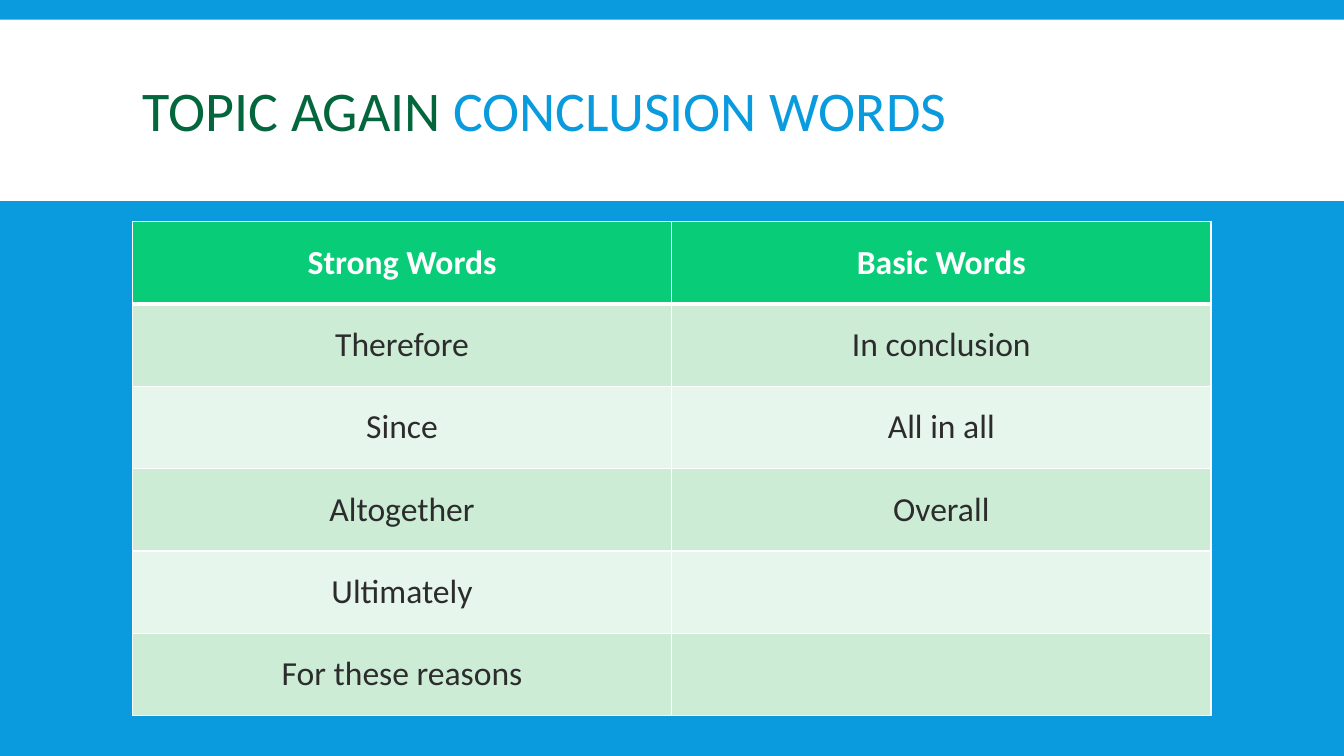
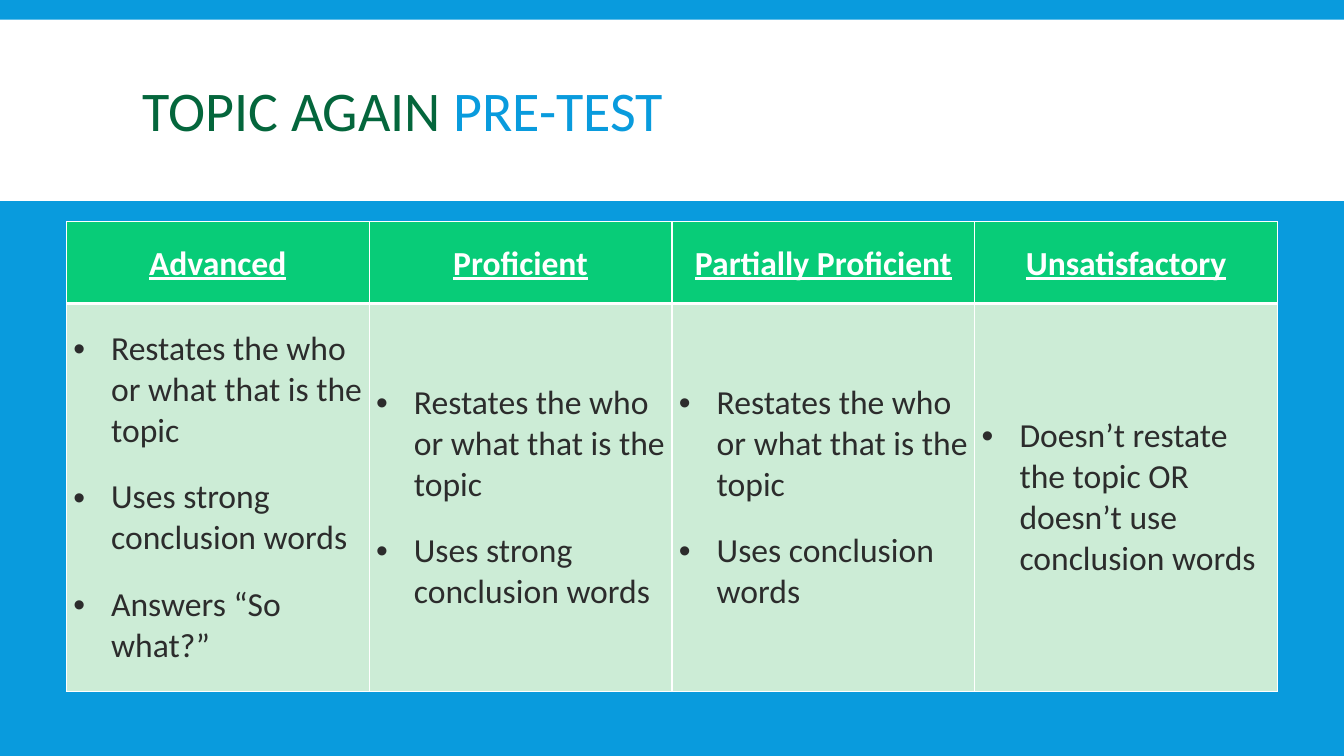
from dataclasses import dataclass

from lxml import etree
from pptx import Presentation
from pptx.dml.color import RGBColor
from pptx.enum.shapes import MSO_SHAPE
from pptx.enum.text import MSO_ANCHOR, PP_ALIGN
from pptx.oxml.ns import qn
from pptx.util import Pt

RECTANGLE = MSO_SHAPE.RECTANGLE
MIDDLE = MSO_ANCHOR.MIDDLE
CENTER = PP_ALIGN.CENTER
LEFT = PP_ALIGN.LEFT

PAGE_WIDTH, PAGE_HEIGHT = 960, 540
TABLE_TOP = 158.4
BULLET_INDENT = 27


@dataclass(frozen=True)
class Theme:
    font: str = "Calibri"
    title_size: int = 40
    table_size: int = 24
    blue: str = "099BDD"
    dark_green: str = "04663C"
    header_green: str = "08CC78"
    row_greens: tuple = ("CCECD6", "E7F6EC")
    white: str = "FFFFFF"
    ink: str = "2C2C2C"
    thin_line: int = 1
    header_line: int = 3


THEME = Theme()


def paint(fill, color):
    fill.solid()
    fill.fore_color.rgb = RGBColor.from_string(color)


def add_span(para, text, size, color, bold=False, underline=False):
    span = para.add_run()
    span.text = text
    font = span.font
    font.name, font.size = THEME.font, Pt(size)
    font.bold, font.underline = bold, underline
    font.color.rgb = RGBColor.from_string(color)


def add_bullet(para):
    """Give the paragraph a hanging round bullet."""
    properties = para._p.get_or_add_pPr()
    properties.set("marL", str(Pt(BULLET_INDENT)))
    properties.set("indent", str(-Pt(BULLET_INDENT)))
    etree.SubElement(properties, qn("a:buFont"), typeface="Arial")
    etree.SubElement(properties, qn("a:buChar"), char="•")


def set_borders(cell, top, bottom):
    """Draw white borders; must run before the cell is filled."""
    properties = cell._tc.get_or_add_tcPr()
    widths = {"L": THEME.thin_line, "R": THEME.thin_line, "T": top, "B": bottom}
    for side, width in widths.items():
        line = etree.SubElement(properties, qn(f"a:ln{side}"), w=str(Pt(width)))
        fill = etree.SubElement(line, qn("a:solidFill"))
        etree.SubElement(fill, qn("a:srgbClr"), val=THEME.white)


def add_page(deck, topic):
    """Add a blue page with its white title band."""
    page = deck.slides.add_slide(deck.slide_layouts[6])
    paint(page.background.fill, THEME.blue)

    band = page.shapes.add_shape(RECTANGLE, 0, Pt(14), Pt(PAGE_WIDTH), Pt(129.6))
    band.shadow.inherit = False
    paint(band.fill, THEME.white)
    band.line.fill.background()

    box = page.shapes.add_textbox(Pt(95), Pt(22), Pt(770), Pt(119))
    frame = box.text_frame
    frame.word_wrap = True
    frame.vertical_anchor = MIDDLE
    para = frame.paragraphs[0]
    para.line_spacing = 0.85
    add_span(para, "TOPIC AGAIN ", THEME.title_size, THEME.dark_green)
    add_span(para, topic, THEME.title_size, THEME.blue)
    return page


def style_cell(cell, row, margins):
    is_header = row == 0
    set_borders(
        cell,
        top=THEME.header_line if row == 1 else THEME.thin_line,
        bottom=THEME.header_line if is_header else THEME.thin_line,
    )
    paint(cell.fill, THEME.header_green if is_header else THEME.row_greens[(row - 1) % 2])
    cell.vertical_anchor = MIDDLE
    cell.margin_left = cell.margin_right = Pt(margins[0])
    cell.margin_top = cell.margin_bottom = Pt(margins[1])


def add_table(page, left, column_width, row_heights, margins, rows, write_cell):
    """Add a centred table; write_cell(cell, content, is_header) sets the text."""
    columns = len(rows[0])
    table = page.shapes.add_table(
        len(rows), columns, Pt(left), Pt(TABLE_TOP),
        Pt(columns * column_width), Pt(sum(row_heights)),
    ).table
    for column in table.columns:
        column.width = Pt(column_width)
    for row, (contents, height) in enumerate(zip(rows, row_heights)):
        table.rows[row].height = Pt(height)
        for column, content in enumerate(contents):
            cell = table.cell(row, column)
            style_cell(cell, row, margins)
            if content:
                write_cell(cell, content, row == 0)


def write_word(cell, word, is_header):
    para = cell.text_frame.paragraphs[0]
    para.alignment = CENTER
    color = THEME.white if is_header else THEME.ink
    add_span(para, word, THEME.table_size, color, bold=is_header)


def write_criteria(cell, content, is_header):
    """Write a level's name, or the list of its criteria as bullets."""
    frame = cell.text_frame
    if is_header:
        para = frame.paragraphs[0]
        para.alignment = CENTER
        para.line_spacing = 1.07
        add_span(para, content, THEME.table_size, THEME.white, bold=True, underline=True)
        return
    for index, criterion in enumerate(content):
        para = frame.add_paragraph() if index else frame.paragraphs[0]
        para.alignment = LEFT
        para.space_after = Pt(18)
        add_bullet(para)
        add_span(para, criterion, THEME.table_size, THEME.ink)


def add_conclusion_words(deck):
    page = add_page(deck, "CONCLUSION WORDS")
    rows = [
        ("Strong Words", "Basic Words"),
        ("Therefore", "In conclusion"),
        ("Since", "All in all"),
        ("Altogether", "Overall"),
        ("Ultimately", ""),
        ("For these reasons", ""),
    ]
    add_table(page, 94.6, 385.2, [58.8] * len(rows), (7.2, 3.6), rows, write_word)


def add_pre_test(deck):
    page = add_page(deck, "PRE-TEST")
    restates = "Restates the who or what that is the topic"
    strong_words = "Uses strong conclusion words"
    rows = [
        ("Advanced", "Proficient", "Partially Proficient", "Unsatisfactory"),
        (
            [restates, strong_words, "Answers “So what?”"],
            [restates, strong_words],
            [restates, "Uses conclusion words"],
            ["Doesn’t restate the topic OR doesn’t use conclusion words"],
        ),
    ]
    add_table(page, 47.4, 216.3, [58.4, 277.2], (5, 0), rows, write_criteria)


def main():
    deck = Presentation()
    deck.slide_width, deck.slide_height = Pt(PAGE_WIDTH), Pt(PAGE_HEIGHT)
    add_conclusion_words(deck)
    add_pre_test(deck)
    deck.save("out.pptx")


if __name__ == "__main__":
    main()
